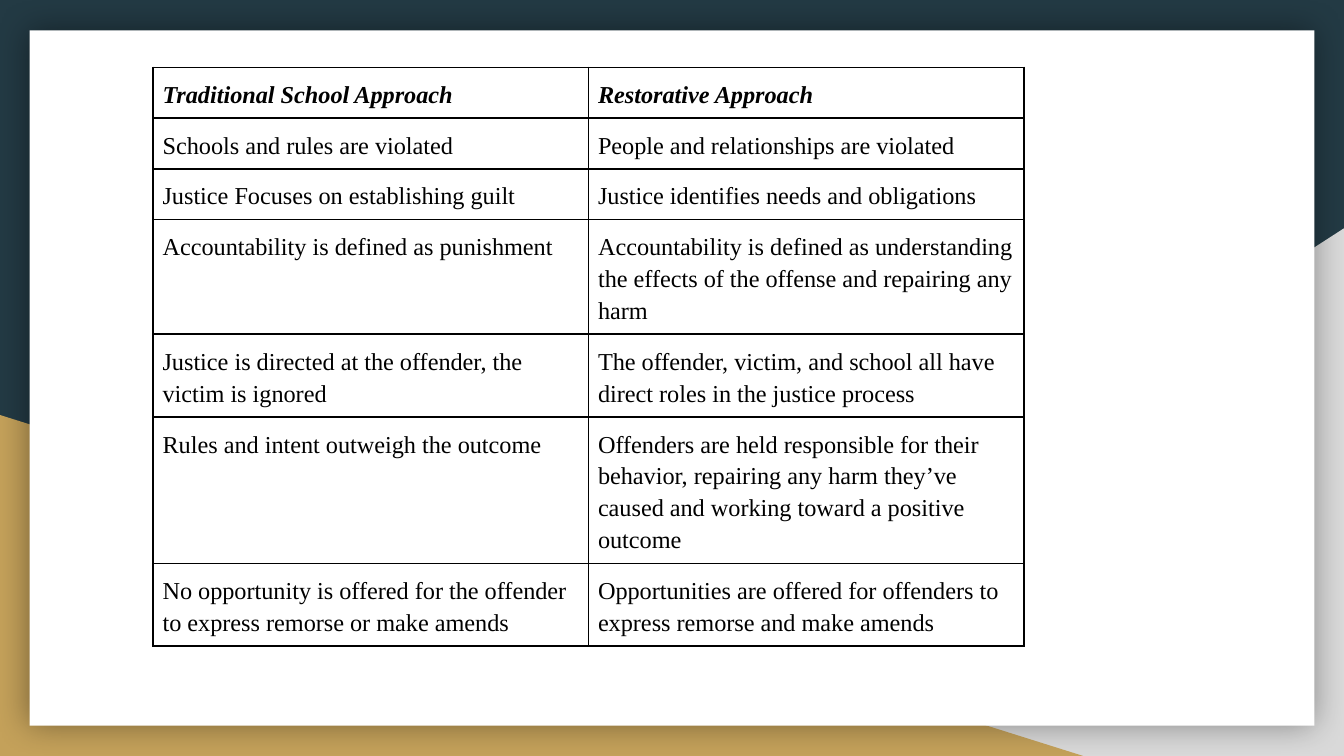
from lxml.etree import SubElement
from pptx import Presentation
from pptx.dml.color import RGBColor
from pptx.enum.shapes import MSO_SHAPE as SHAPE
from pptx.oxml.ns import qn
from pptx.util import Inches, Pt

NAVY = RGBColor(0x23, 0x3A, 0x44)
GRAY = RGBColor(0xD9, 0xD9, 0xD9)
GOLD = RGBColor(0xC4, 0xA1, 0x5A)
WHITE = RGBColor(0xFF, 0xFF, 0xFF)
BLACK = RGBColor(0x00, 0x00, 0x00)

ROWS = [
    ("Traditional School Approach", "Restorative Approach"),
    ("Schools and rules are violated", "People and relationships are violated"),
    ("Justice Focuses on establishing guilt", "Justice identifies needs and obligations"),
    ("Accountability is defined as punishment",
     "Accountability is defined as understanding the effects of the offense and repairing any harm"),
    ("Justice is directed at the offender, the victim is ignored",
     "The offender, victim, and school all have direct roles in the justice process"),
    ("Rules and intent outweigh the outcome",
     "Offenders are held responsible for their behavior, repairing any harm they’ve caused "
     "and working toward a positive outcome"),
    ("No opportunity is offered for the offender to express remorse or make amends",
     "Opportunities are offered for offenders to express remorse and make amends"),
]
ROW_HEIGHTS = [0.36, 0.36, 0.36, 0.8, 0.58, 1.02, 0.58]


class Deck:
    font, size, spacing = "Times New Roman", Pt(13), 1.2
    inset, border = Inches(0.07), Pt(1)

    def __init__(self, width, height):
        self.prs = Presentation()
        self.prs.slide_width, self.prs.slide_height = width, height
        self.s = self.prs.slides.add_slide(self.prs.slide_layouts[6])

    def x(self, share):
        return round(self.prs.slide_width * share)

    def y(self, share):
        return round(self.prs.slide_height * share)

    def background(self, color):
        fill = self.s.background.fill
        fill.solid()
        fill.fore_color.rgb = color

    def shape(self, kind, left, top, right, bottom, color, flip=False):
        sp = self.s.shapes.add_shape(kind, self.x(left), self.y(top),
                                     self.x(right - left), self.y(bottom - top))
        sp.shadow.inherit = False
        sp.fill.solid()
        sp.fill.fore_color.rgb = color
        sp.line.fill.background()
        if flip:
            sp.element.spPr.get_or_add_xfrm().set("flipH", "1")
        return sp

    def glow_shadow(self, sp, color, blur, opacity):
        effects = sp.element.spPr.find(qn("a:effectLst"))
        shadow = SubElement(effects, qn("a:outerShdw"), blurRad=str(blur), dist="0",
                            dir="0", algn="ctr", rotWithShape="0")
        clr = SubElement(shadow, qn("a:srgbClr"), val=str(color))
        SubElement(clr, qn("a:alpha"), val=str(opacity * 1000))

    def table(self, left, top, width, rows, heights):
        frame = self.s.shapes.add_table(len(rows), len(rows[0]), self.x(left), self.y(top),
                                        self.x(width), Inches(sum(heights)))
        table = frame.table
        table.first_row = table.horz_banding = False
        for i, (texts, height) in enumerate(zip(rows, heights)):
            table.rows[i].height = Inches(height)
            for j, text in enumerate(texts):
                self.cell(table.cell(i, j), text, header=i == 0)

    def cell(self, cell, text, header):
        cell.margin_left = cell.margin_right = self.inset
        cell.margin_top = cell.margin_bottom = self.inset
        self.borders(cell)
        cell.fill.background()
        p = cell.text_frame.paragraphs[0]
        p.line_spacing = self.spacing
        r = p.add_run()
        r.text = text
        r.font.name, r.font.size = self.font, self.size
        r.font.bold = r.font.italic = header
        r.font.color.rgb = BLACK

    def borders(self, cell):
        props = cell._tc.get_or_add_tcPr()
        for side in ("lnL", "lnR", "lnT", "lnB"):
            line = SubElement(props, qn(f"a:{side}"), w=str(self.border))
            fill = SubElement(line, qn("a:solidFill"))
            SubElement(fill, qn("a:srgbClr"), val=str(BLACK))


def main():
    deck = Deck(Inches(10), Inches(5.625))
    deck.background(NAVY)
    deck.shape(SHAPE.RIGHT_TRIANGLE, 0.392, 0.302, 1, 1, GRAY, flip=True)
    deck.shape(SHAPE.RIGHT_TRIANGLE, 0, 0.549, 0.806, 1, GOLD)
    panel = deck.shape(SHAPE.RECTANGLE, 0.022, 0.04, 0.978, 0.96, WHITE)
    deck.glow_shadow(panel, BLACK, Pt(18), 40)
    deck.table(0.114, 0.089, 0.648, ROWS, ROW_HEIGHTS)
    deck.prs.save("out.pptx")


if __name__ == "__main__":
    main()
